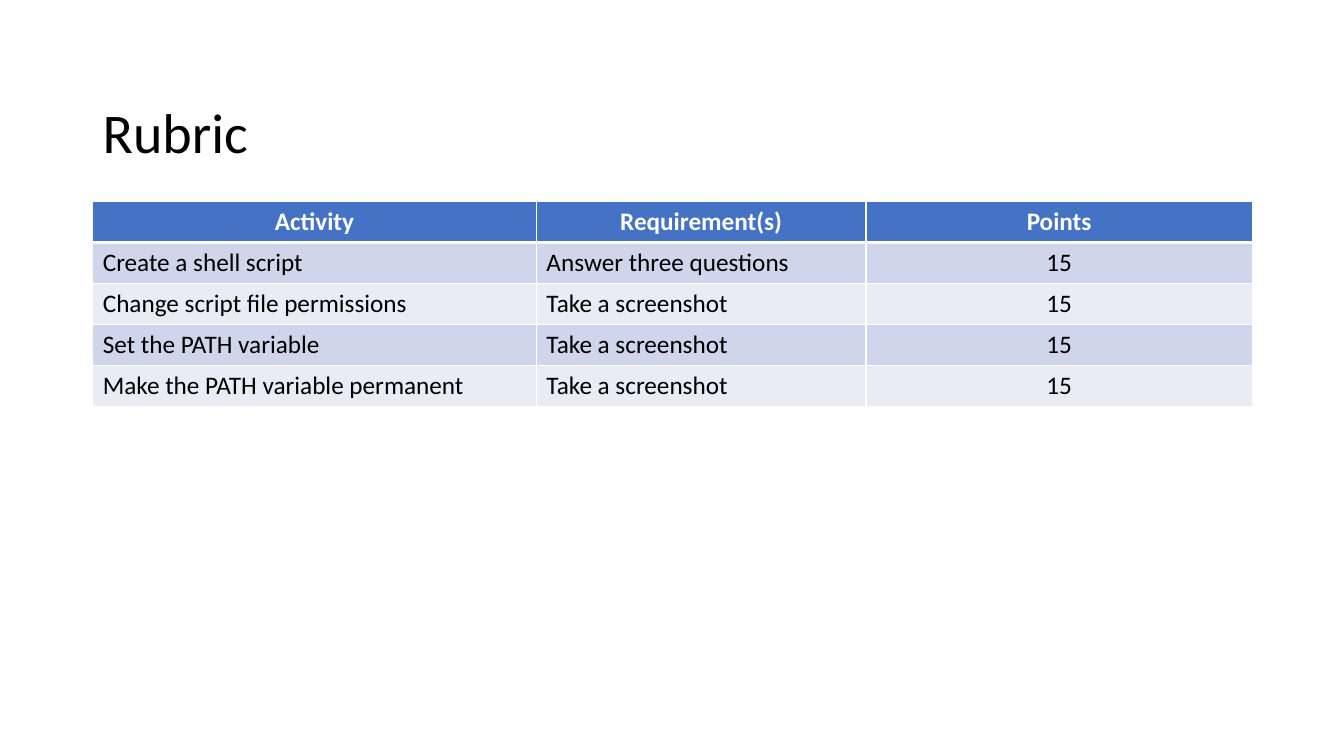
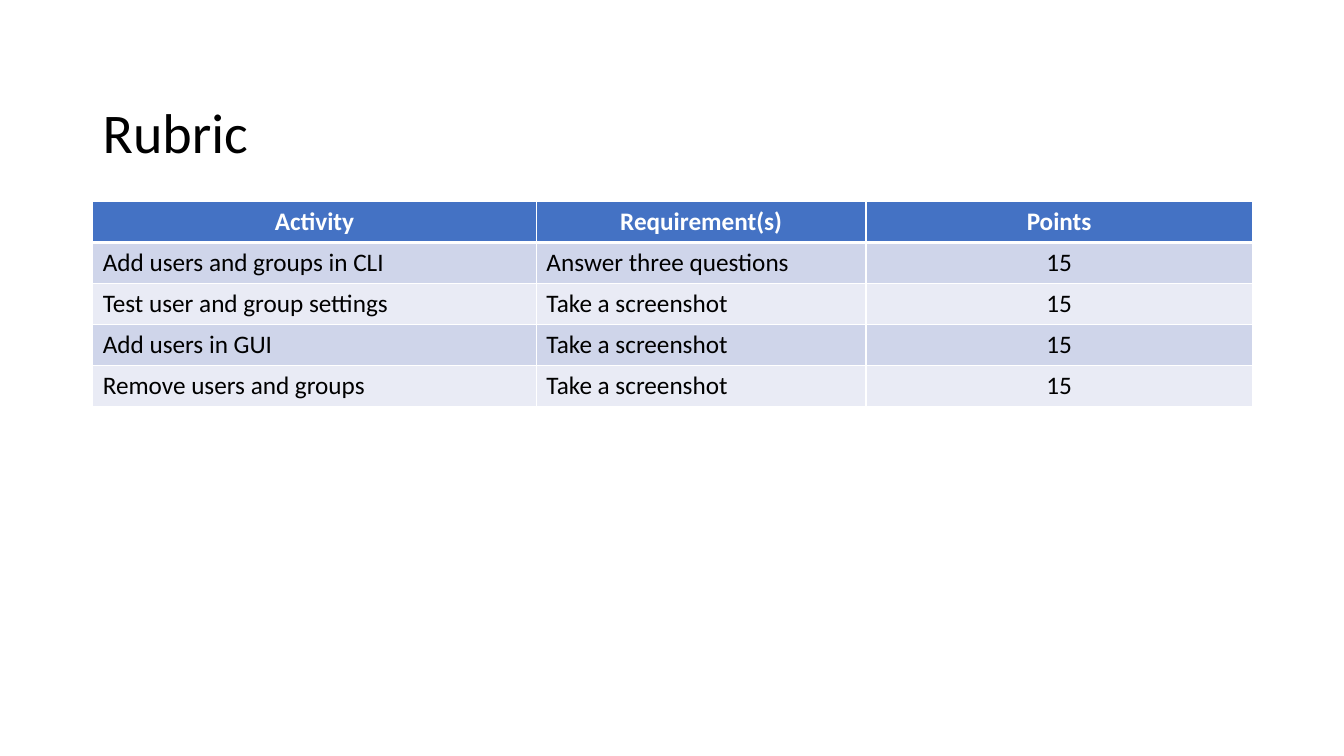
from lxml import etree
from pptx import Presentation
from pptx.dml.color import RGBColor
from pptx.enum.text import MSO_ANCHOR, PP_ALIGN
from pptx.oxml.ns import qn
from pptx.util import Inches, Pt

LEFT, CENTER = PP_ALIGN.LEFT, PP_ALIGN.CENTER
MIDDLE = MSO_ANCHOR.MIDDLE

BLACK = RGBColor(0x00, 0x00, 0x00)
WHITE = RGBColor(0xFF, 0xFF, 0xFF)
BLUE = RGBColor(0x44, 0x72, 0xC4)
BANDS = (RGBColor(0xCF, 0xD5, 0xEA), RGBColor(0xE9, 0xEB, 0xF5))

FONT = "Calibri"
TITLE_FORMAT = {"name": FONT, "size": Pt(40), "bold": False}
HEADER_FORMAT = {"name": FONT, "size": Pt(18), "bold": True}
BODY_FORMAT = {"name": FONT, "size": Pt(18), "bold": False}

MARGIN, CONTENT_WIDTH = 0.92, 11.5
COLUMN_WIDTHS = (4.4, 3.27, 3.83)
COLUMN_ALIGNS = (LEFT, LEFT, CENTER)
HEADERS = ("Activity", "Requirement(s)", "Points")
THIN, THICK = Pt(1), Pt(3)

QUESTIONS, SCREENSHOT = "Answer three questions", "Take a screenshot"
REQUIREMENTS = (QUESTIONS, SCREENSHOT, SCREENSHOT, SCREENSHOT)
POINTS = "15"
RUBRICS = (
    ("Create a shell script", "Change script file permissions",
     "Set the PATH variable", "Make the PATH variable permanent"),
    ("Add users and groups in CLI", "Test user and group settings",
     "Add users in GUI", "Remove users and groups"),
)


def write_text(tf, text, formats, color, align=LEFT):
    p = tf.paragraphs[0]
    p.alignment = align
    r = p.add_run()
    r.text = text
    for name, value in formats.items():
        setattr(r.font, name, value)
    r.font.color.rgb = color
    return p


def add_title(s, text):
    box = s.shapes.add_textbox(Inches(MARGIN), Inches(0.83),
                               Inches(CONTENT_WIDTH), Inches(1.02))
    tf = box.text_frame
    tf.word_wrap = True
    tf.vertical_anchor = MIDDLE
    write_text(tf, text, TITLE_FORMAT, BLACK).line_spacing = 0.9


def set_borders(cell, top, bottom):
    """Draw white cell borders; call before filling, as the schema wants lines first."""
    tc_pr = cell._tc.get_or_add_tcPr()
    for side, width in (("L", THIN), ("R", THIN), ("T", top), ("B", bottom)):
        ln = etree.SubElement(tc_pr, qn(f"a:ln{side}"), w=str(width))
        fill = etree.SubElement(ln, qn("a:solidFill"))
        etree.SubElement(fill, qn("a:srgbClr"), val=str(WHITE))


def add_rubric_table(s, rows):
    table = s.shapes.add_table(len(rows) + 1, len(HEADERS), Inches(MARGIN), Inches(2),
                               Inches(CONTENT_WIDTH), Inches(2.03)).table
    for column, width in zip(table.columns, COLUMN_WIDTHS):
        column.width = Inches(width)
    for i, row in enumerate((HEADERS, *rows)):
        is_header = i == 0
        formats, color = (HEADER_FORMAT, WHITE) if is_header else (BODY_FORMAT, BLACK)
        for j, text in enumerate(row):
            cell = table.cell(i, j)
            set_borders(cell, THICK if i == 1 else THIN, THICK if is_header else THIN)
            cell.fill.solid()
            cell.fill.fore_color.rgb = BLUE if is_header else BANDS[(i - 1) % 2]
            align = CENTER if is_header else COLUMN_ALIGNS[j]
            write_text(cell.text_frame, text, formats, color, align)


def main():
    prs = Presentation()
    prs.slide_width, prs.slide_height = Inches(13.33), Inches(7.5)
    for activities in RUBRICS:
        s = prs.slides.add_slide(prs.slide_layouts[6])
        add_title(s, "Rubric")
        add_rubric_table(s, [(activity, requirement, POINTS)
                             for activity, requirement in zip(activities, REQUIREMENTS)])
    prs.save("out.pptx")


if __name__ == "__main__":
    main()
